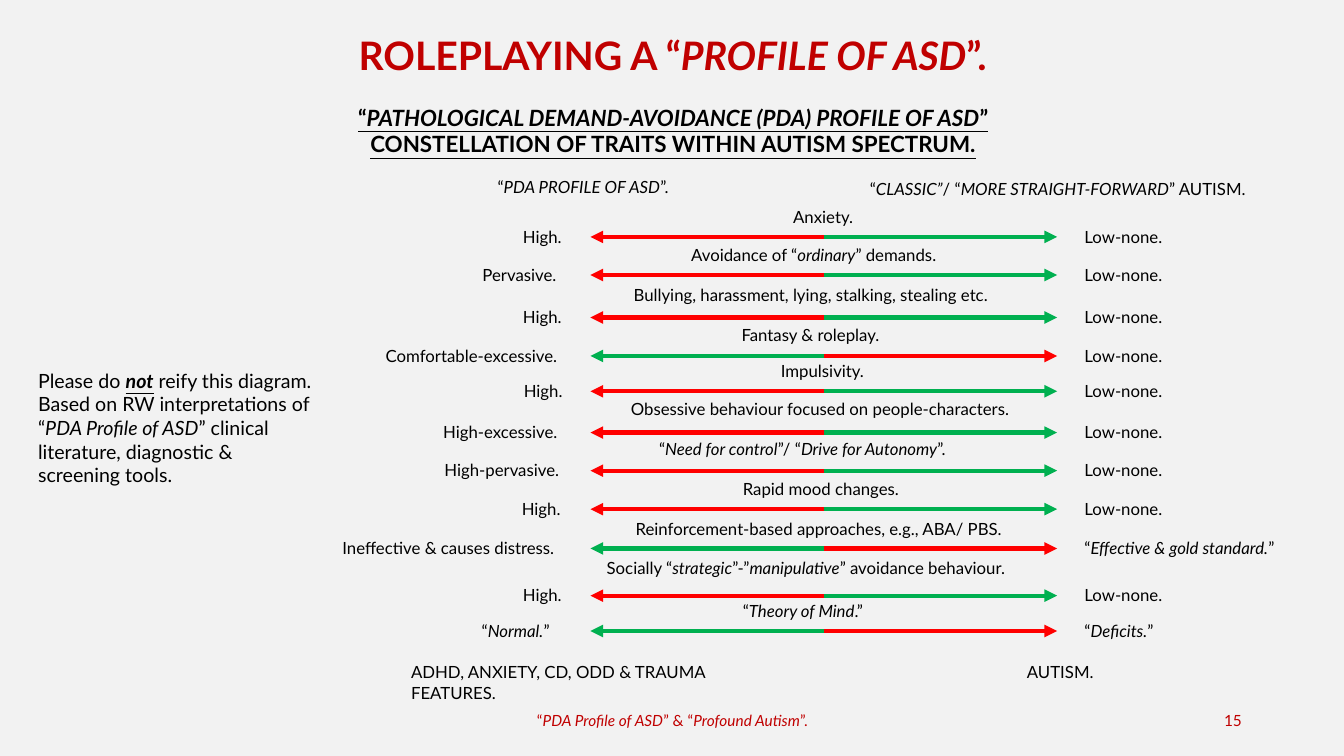
import pptx
import pptx.util
import pptx.dml.color
import pptx.enum.shapes
import pptx.enum.text
import pptx.oxml.ns
from lxml import etree

Cm, Pt = pptx.util.Cm, pptx.util.Pt
ALIGN = pptx.enum.text.PP_ALIGN
ANCHOR = pptx.enum.text.MSO_ANCHOR

COLORS = {"background": "F2F2F2", "accent": "C00000", "text": "000000",
          "red": "FF0000", "green": "00B050"}
FONT = "Lato"

# Content: a text is a list of (words, style); style letters are b, i and u
TITLE = [("ROLEPLAYING A “", "b"), ("PROFILE OF ASD", "bi"), ("”.", "b")]
SUBTITLE = [("“", "bu"), ("PATHOLOGICAL DEMAND-AVOIDANCE (PDA) PROFILE OF ASD", "biu"),
            ("” CONSTELLATION OF TRAITS WITHIN AUTISM SPECTRUM.", "bu")]
NOTE = [("Please do ", ""), ("not", "biu"),
        (" reify this diagram. Based on RW interpretations of “", ""),
        ("PDA Profile of ASD", "i"),
        ("” clinical literature, diagnostic & screening tools.", "")]
FOOTER = [("“", ""), ("PDA Profile of ASD", "i"), ("” & “", ""),
          ("Profound Autism", "i"), ("”.", "")]
PAGE = [("15", "")]

# Captions above and below the scales: left, top, width, text
CAPTIONS = [
    (12.29, 4.32, 5.11, [("“", ""), ("PDA PROFILE OF ASD", "i"), ("”.", "")]),
    (21.67, 4.37, 10.01, [("“", ""), ("CLASSIC”", "i"), ("/ “", ""),
                          ("MORE STRAIGHT-FORWARD", "i"), ("” AUTISM.", "")]),
    (10.11, 16.56, 9.5, [("ADHD, ANXIETY, CD, ODD & TRAUMA FEATURES.", "")]),
    (25.63, 16.54, 2.8, [("AUTISM.", "")]),
]

HIGH = [("High.", "")]
LOW = [("Low-none.", "")]

# Scales: arrow y, trait left, trait top, trait, PDA label left, PDA label,
# autism label, colour of the PDA half
SCALES = [
    (5.97, 19.74, 5.08, [("Anxiety.", "")], 12.93, HIGH, LOW, "red"),
    (6.93, 17.17, 6.05, [("Avoidance of “", ""), ("ordinary", "i"), ("” demands.", "")],
     11.91, [("Pervasive.", "")], LOW, "red"),
    (8.0, 15.72, 7.04, [("Bullying, harassment, lying, stalking, stealing etc.", "")],
     12.93, HIGH, LOW, "red"),
    (8.97, 18.44, 8.05, [("Fantasy & roleplay.", "")],
     9.47, [("Comfortable-excessive.", "")], LOW, "green"),
    (9.86, 19.43, 8.97, [("Impulsivity.", "")], 12.95, HIGH, LOW, "red"),
    (10.9, 15.65, 9.93, [("Obsessive behaviour focused on people-characters.", "")],
     10.92, [("High-excessive.", "")], LOW, "red"),
    (11.86, 16.36, 10.92, [("“", ""), ("Need for control", "i"), ("”/ “", ""),
                           ("Drive for Autonomy", "i"), ("”.", "")],
     10.95, [("High-pervasive.", "")], LOW, "red"),
    (12.83, 18.47, 11.94, [("Rapid mood changes.", "")], 12.9, HIGH, LOW, "red"),
    (13.82, 15.77, 12.95, [("Reinforcement-based approaches, e.g., ABA/ PBS.", "")],
     8.38, [("Ineffective & causes distress.", "")],
     [("“", ""), ("Effective & gold standard.", "i"), ("”", "")], "green"),
    (15.01, 15.04, 13.94, [("Socially “", ""), ("strategic", "i"), ("”-”", ""),
                           ("manipulative", "i"), ("” avoidance behaviour.", "")],
     12.93, HIGH, LOW, "red"),
    (15.9, 18.47, 15.01, [("“", ""), ("Theory of Mind", "i"), (".”", "")],
     11.89, [("“", ""), ("Normal.", "i"), ("”", "")],
     [("“", ""), ("Deficits.", "i"), ("”", "")], "green"),
]

# Layout in centimetres
AXIS = 20.76
ARROW_LENGTH = 5.88
PDA_LABEL_RIGHT = 14.48
AUTISM_LABEL_LEFT, AUTISM_LABEL_WIDTH = 27.08, 6.1
LABEL_RISE = 0.39
LINE_HEIGHT = 0.77


def rgb(color):
    return pptx.dml.color.RGBColor.from_string(COLORS[color])


def write(frame, text, size, color="text", align=ALIGN.LEFT, anchor=ANCHOR.TOP):
    frame.word_wrap = True
    frame.auto_size = pptx.enum.text.MSO_AUTO_SIZE.NONE
    frame.vertical_anchor = anchor
    paragraph = frame.paragraphs[0]
    paragraph.alignment = align
    for words, style in text:
        run = paragraph.add_run()
        run.text = words
        run.font.name = FONT
        run.font.size = Pt(size)
        run.font.color.rgb = rgb(color)
        run.font.bold = "b" in style
        run.font.italic = "i" in style
        run.font.underline = "u" in style


def add_text(left, top, width, height, text, size, **look):
    box = slide.shapes.add_textbox(Cm(left), Cm(top), Cm(width), Cm(height))
    write(box.text_frame, text, size, **look)
    return box


def add_label(left, top, width, text):
    add_text(left, top, width, LINE_HEIGHT, text, 12).text_frame.margin_right = 0


def add_arrow(y, end, color):
    arrow = slide.shapes.add_connector(
        pptx.enum.shapes.MSO_CONNECTOR.STRAIGHT, Cm(AXIS), Cm(y), Cm(end), Cm(y))
    arrow.line.color.rgb = rgb(color)
    arrow.line.width = Pt(3)
    qn = pptx.oxml.ns.qn
    properties = arrow._element.spPr
    etree.SubElement(properties.find(qn("a:ln")), qn("a:tailEnd"), type="triangle")
    etree.SubElement(properties, qn("a:effectLst"))


presentation = pptx.Presentation()
presentation.slide_width, presentation.slide_height = Cm(33.87), Cm(19.05)
slide = presentation.slides.add_slide(presentation.slide_layouts[5])
slide.background.fill.solid()
slide.background.fill.fore_color.rgb = rgb("background")

# Title, subtitle and note
title = slide.shapes.title
title.left, title.top, title.width, title.height = Cm(1.75), Cm(0.66), Cm(30.4), Cm(1.45)
write(title.text_frame, TITLE, 28, color="accent", align=ALIGN.CENTER)
add_text(8.53, 2.49, 16.87, 1.63, SUBTITLE, 16, align=ALIGN.CENTER)
add_text(0.71, 9.17, 7.44, 3.25, NOTE, 14)

# Captions
for left, top, width, caption in CAPTIONS:
    add_text(left, top, width, LINE_HEIGHT, caption, 12)

# Trait scales
for y, trait_left, trait_top, trait, pda_left, pda, autism, pda_color in SCALES:
    add_arrow(y, AXIS + ARROW_LENGTH, "green" if pda_color == "red" else "red")
    add_arrow(y, AXIS - ARROW_LENGTH, pda_color)
    add_label(trait_left, trait_top, 2 * (AXIS - trait_left), trait)
    add_label(pda_left, y - LABEL_RISE, PDA_LABEL_RIGHT - pda_left, pda)
    add_label(AUTISM_LABEL_LEFT, y - LABEL_RISE, AUTISM_LABEL_WIDTH, autism)

# Footer and page number
add_text(11.23, 17.65, 11.43, 1.02, FOOTER, 11, color="accent",
         align=ALIGN.CENTER, anchor=ANCHOR.MIDDLE)
add_text(23.93, 17.65, 7.62, 1.02, PAGE, 11, color="accent",
         align=ALIGN.RIGHT, anchor=ANCHOR.MIDDLE)

presentation.save("out.pptx")
